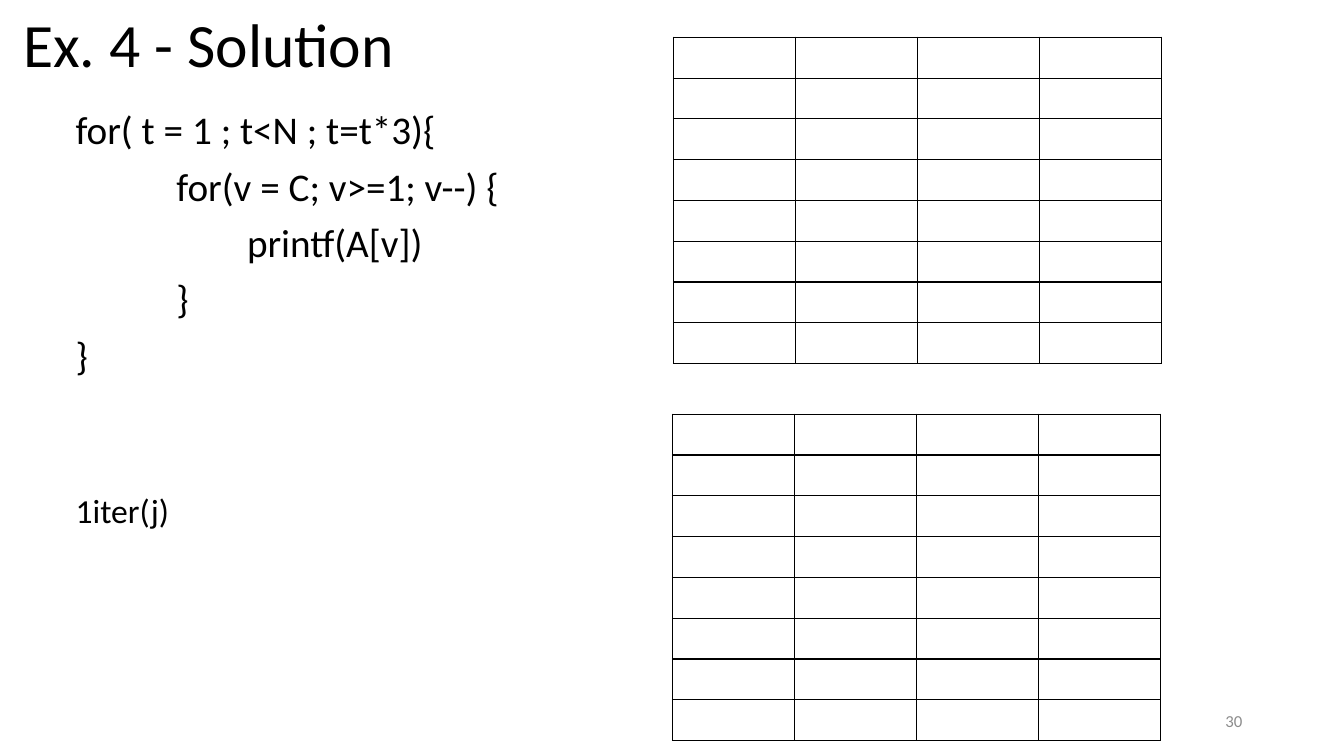
from lxml import etree
from pptx import Presentation
from pptx import util as u
from pptx.dml.color import RGBColor
from pptx.enum import text as t
from pptx.oxml import ns

PX = 9144  # EMU per px, 100 px to the inch
BLACK = RGBColor(0, 0, 0)
GREY = RGBColor(0x8C, 0x8C, 0x8C)


def place(shape, *box):
    for side, px in zip(("left", "top", "width", "height"), box):
        setattr(shape, side, px * PX)


def style(para, size, color, **form):
    look = {"name": "Calibri", "size": u.Pt(size)}
    for key, val in look.items():
        setattr(para.font, key, val)
    para.font.color.rgb = color
    for key, val in form.items():
        setattr(para, key, val)


deck = Presentation()
deck.slide_width, deck.slide_height = 1333 * PX, 750 * PX
slide = deck.slides.add_slide(deck.slide_layouts[1])
title, body = slide.placeholders

# Title
place(title, 13, 6, 479, 83)
frame = title.text_frame
frame.text = "Ex. 4 - Solution"
frame.auto_size = t.MSO_AUTO_SIZE.NONE
frame.vertical_anchor = t.MSO_ANCHOR.MIDDLE
style(frame.paragraphs[0], 44, BLACK, alignment=t.PP_ALIGN.LEFT, line_spacing=0.9)

# Code: text, indent in px, size, space before in points
code = [
    ("for( t = 1 ; t<N ; t=t*3){", 0, 28, 10),
    ("for(v = C; v>=1; v--) {", 100, 28, 10),
    ("printf(A[v])", 170, 28, 10),
    ("}", 100, 28, 10),
    ("}", 0, 28, 10),
    ("1iter(j)", 0, 24, 83),
]
place(body, 65, 105, 506, 286)
frame = body.text_frame
frame.auto_size = t.MSO_AUTO_SIZE.NONE
frame.text = "\n".join(row[0] for row in code)
for para, (_, left, size, gap) in zip(frame.paragraphs, code):
    style(para, size, BLACK, line_spacing=0.9, space_before=u.Pt(gap))
    props = para._p.get_or_add_pPr()
    props.set("marL", str(left * PX))
    props.set("indent", "0")
    etree.SubElement(props, ns.qn("a:buNone"))

# Two empty trace tables
for left, top in ((667, 411), (668, 37)):
    grid = slide.shapes.add_table(8, 4, left * PX, top * PX, 484 * PX, 324 * PX).table
    grid.first_row = grid.horz_banding = False
    for cell in grid.iter_cells():
        cell.margin_top = cell.margin_bottom = 0
        props = cell._tc.get_or_add_tcPr()
        for side in "LRTB":
            line = etree.SubElement(props, ns.qn("a:ln" + side), w=str(u.Pt(1)))
            fill = etree.SubElement(line, ns.qn("a:solidFill"))
            etree.SubElement(fill, ns.qn("a:srgbClr"), val=str(BLACK))
        cell.fill.background()

# Page number
page = slide.shapes.add_textbox(0, 0, 0, 0)
place(page, 942, 695, 300, 40)
frame = page.text_frame
frame.word_wrap = True
frame.text = "30"
frame.vertical_anchor = t.MSO_ANCHOR.MIDDLE
style(frame.paragraphs[0], 12, GREY, alignment=t.PP_ALIGN.RIGHT)

deck.save("out.pptx")
